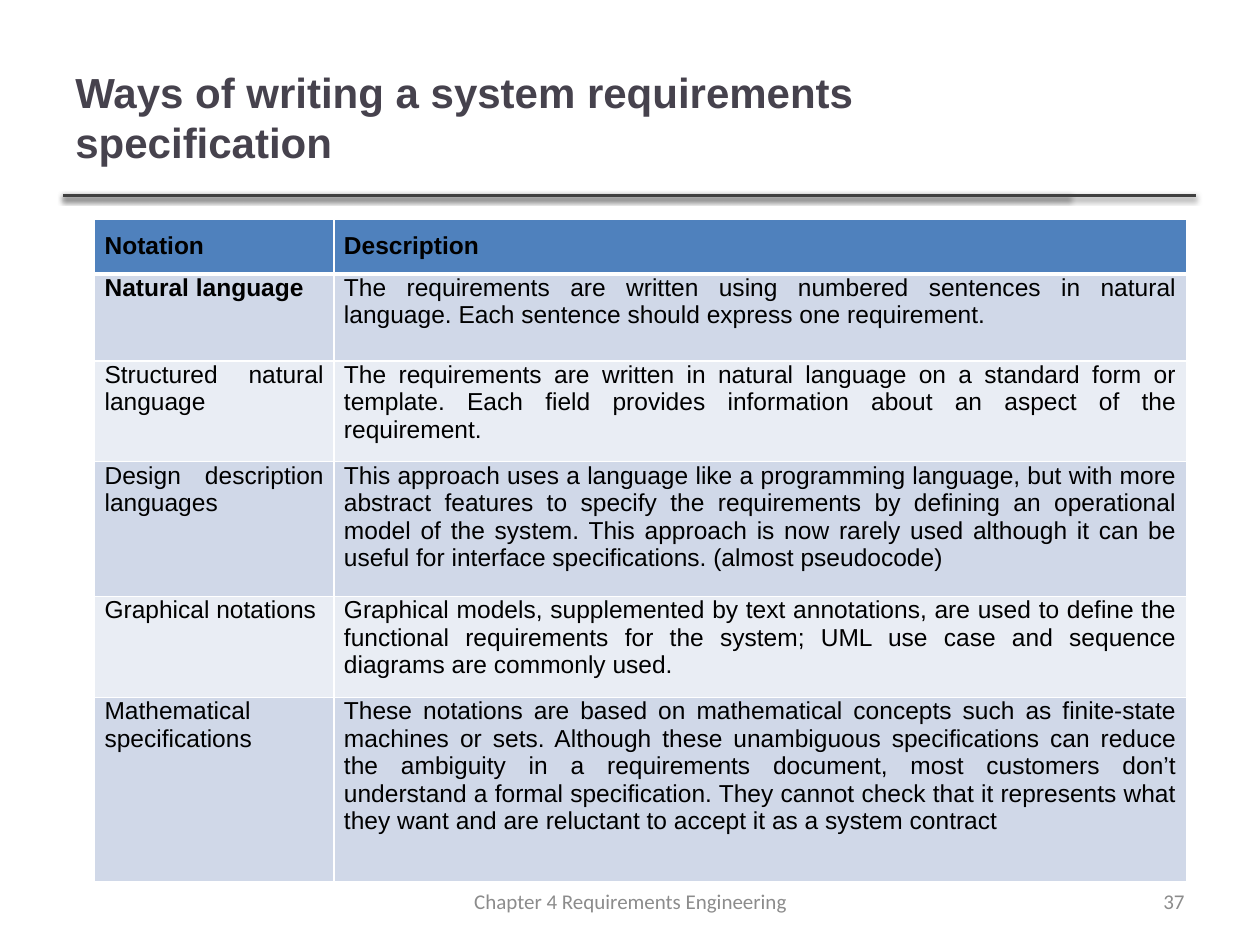
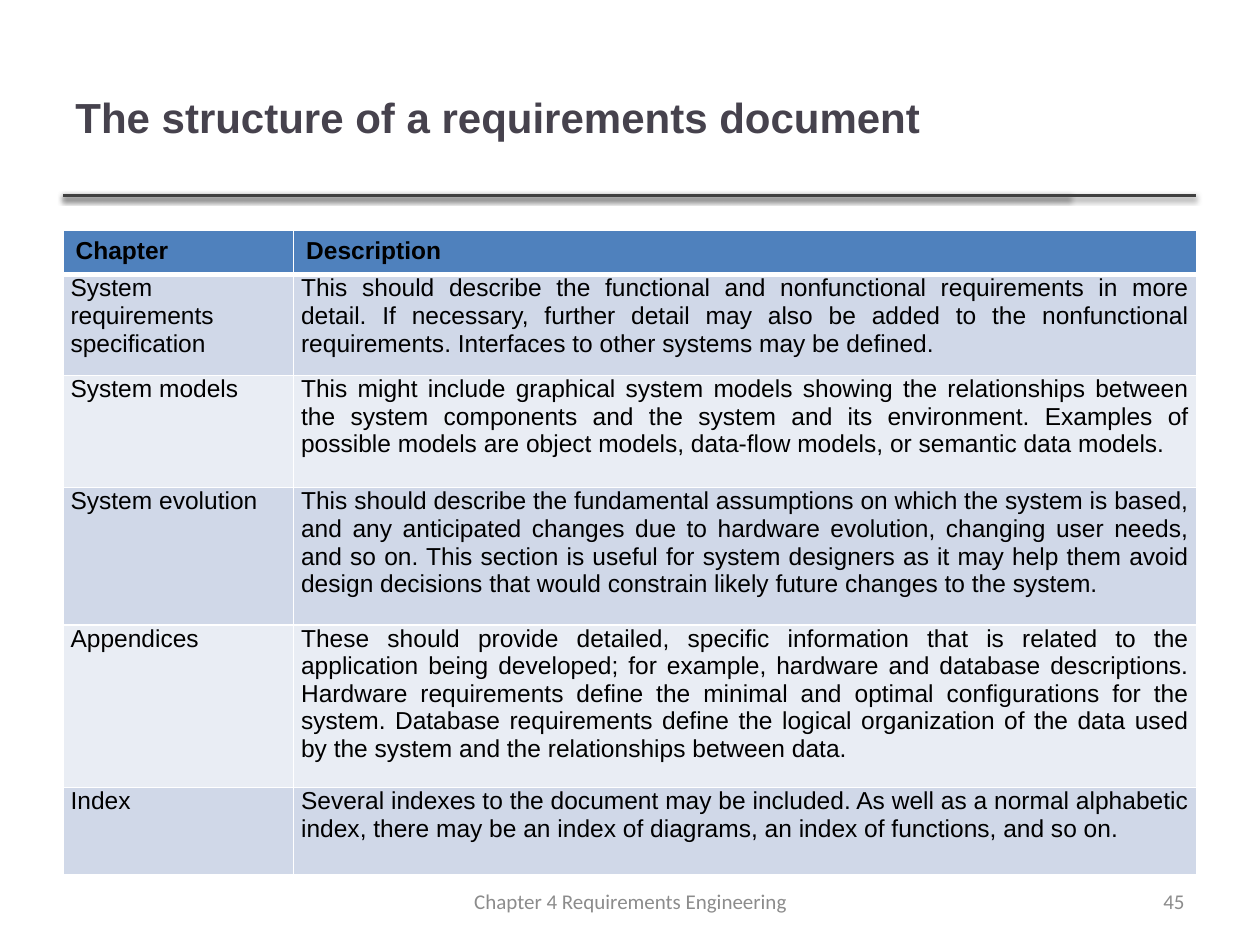
from dataclasses import dataclass

from lxml.etree import SubElement
from pptx import Presentation
from pptx.dml.color import RGBColor
from pptx.enum.shapes import MSO_CONNECTOR as Connector
from pptx.enum.text import MSO_ANCHOR as Anchor, PP_ALIGN as Align
from pptx.oxml.ns import qn
from pptx.slide import Slide
from pptx.table import _Cell as Cell
from pptx.text.text import _Paragraph as Paragraph
from pptx.util import Inches, Pt

WHITE = RGBColor(0xFF, 0xFF, 0xFF)
BLACK = RGBColor(0x00, 0x00, 0x00)
TITLE_COLOR = RGBColor(0x46, 0x42, 0x4D)
RULE_COLOR = RGBColor(0x40, 0x40, 0x40)
FOOTER_COLOR = RGBColor(0x8C, 0x8C, 0x8C)
HEADER_FILL = RGBColor(0x4F, 0x81, 0xBD)
BAND_FILLS = (RGBColor(0xD0, 0xD8, 0xE8), RGBColor(0xE9, 0xED, 0xF4))

FOOTER_TEXT = "Chapter 4 Requirements Engineering"
RULE_LEFT, RULE_TOP = 0.5, 1.55
RULE_ENDS = (8.49, 9.49)
THIN, THICK = 1, 3


@dataclass(frozen=True)
class TextStyle:
    font: str
    size: int
    color: RGBColor
    bold: bool = False


@dataclass(frozen=True)
class Box:
    left: float
    top: float
    width: float
    height: float


@dataclass(frozen=True)
class Insets:
    side: float
    top: float
    bottom: float


@dataclass(frozen=True)
class TablePage:
    title: str
    number: int
    left: float
    top: float
    columns: tuple[float, float]
    heights: tuple[float, ...]
    header_insets: Insets
    body_insets: Insets
    header_aligns: tuple[Align, Align]
    rows: tuple[tuple[str, str], ...]
    bold_entries: tuple[str, ...] = ()


TITLE_STYLE = TextStyle("Arial", 24, TITLE_COLOR, True)
HEADER_STYLE = TextStyle("Arial", 14, BLACK, True)
BODY_STYLE = TextStyle("Arial", 14, BLACK)
FOOTER_STYLE = TextStyle("Calibri", 12, FOOTER_COLOR)

TITLE_BOX = Box(0.5, 0.3, 7.98, 1.25)
FOOTER_BOX = Box(3.42, 6.95, 3.17, 0.4)
NUMBER_BOX = Box(7.17, 6.95, 2.33, 0.4)

PAGES = (
    TablePage(
        title="Ways of writing a system requirements specification",
        number=37,
        left=0.75,
        top=1.74,
        columns=(1.9, 6.77),
        heights=(0.4, 0.69, 0.69, 1.07, 0.69, 1.46),
        header_insets=Insets(0.08, 0.1, 0.1),
        body_insets=Insets(0.08, 0, 0.1),
        header_aligns=(Align.LEFT, Align.JUSTIFY),
        bold_entries=("Natural language",),
        rows=(
            ("Notation", "Description"),
            (
                "Natural language",
                "The requirements are written using numbered sentences in natural "
                "language. Each sentence should express one requirement.",
            ),
            (
                "Structured natural language",
                "The requirements are written in natural language on a standard form or "
                "template. Each field provides information about an aspect of the "
                "requirement.",
            ),
            (
                "Design description languages",
                "This approach uses a language like a programming language, but with more "
                "abstract features to specify the requirements by defining an operational "
                "model of the system. This approach is now rarely used although it can be "
                "useful for interface specifications. (almost pseudocode)",
            ),
            (
                "Graphical notations",
                "Graphical models, supplemented by text annotations, are used to define the "
                "functional requirements for the system; UML use case and sequence "
                "diagrams are commonly used.",
            ),
            (
                "Mathematical specifications",
                "These notations are based on mathematical concepts such as finite-state "
                "machines or sets. Although these unambiguous specifications can reduce "
                "the ambiguity in a requirements document, most customers don’t "
                "understand a formal specification. They cannot check that it represents "
                "what they want and are reluctant to accept it as a system contract",
            ),
        ),
    ),
    TablePage(
        title="The structure of a requirements document",
        number=45,
        left=0.5,
        top=1.83,
        columns=(1.83, 7.17),
        heights=(0.35, 0.76, 0.89, 1.09, 1.29, 0.69),
        header_insets=Insets(0.1, 0.05, 0.05),
        body_insets=Insets(0.06, 0, 0.1),
        header_aligns=(Align.LEFT, Align.LEFT),
        rows=(
            ("Chapter", "Description"),
            (
                "System requirements specification",
                "This should describe the functional and nonfunctional requirements in more "
                "detail. If necessary, further detail may also be added to the nonfunctional "
                "requirements. Interfaces to other systems may be defined.",
            ),
            (
                "System models",
                "This might include graphical system models showing the relationships between "
                "the system components and the system and its environment. Examples of "
                "possible models are object models, data-flow models, or semantic data models.",
            ),
            (
                "System evolution",
                "This should describe the fundamental assumptions on which the system is based, "
                "and any anticipated changes due to hardware evolution, changing user needs, "
                "and so on. This section is useful for system designers as it may help them "
                "avoid design decisions that would constrain likely future changes to the "
                "system.",
            ),
            (
                "Appendices",
                "These should provide detailed, specific information that is related to the "
                "application being developed; for example, hardware and database descriptions. "
                "Hardware requirements define the minimal and optimal configurations for the "
                "system. Database requirements define the logical organization of the data used "
                "by the system and the relationships between data.",
            ),
            (
                "Index",
                "Several indexes to the document may be included. As well as a normal alphabetic "
                "index, there may be an index of diagrams, an index of functions, and so on.",
            ),
        ),
    ),
)


def write(para: Paragraph, text: str, style: TextStyle, align: Align) -> None:
    para.alignment = align
    span = para.add_run()
    span.text = text
    span.font.name = style.font
    span.font.size = Pt(style.size)
    span.font.bold = style.bold
    span.font.color.rgb = style.color


def add_text(page: Slide, box: Box, text: str, style: TextStyle, align: Align) -> None:
    shape = page.shapes.add_textbox(
        Inches(box.left), Inches(box.top), Inches(box.width), Inches(box.height)
    )
    frame = shape.text_frame
    frame.word_wrap = True
    frame.vertical_anchor = Anchor.MIDDLE
    write(frame.paragraphs[0], text, style, align)


def add_rule(page: Slide, end: float) -> None:
    rule = page.shapes.add_connector(
        Connector.STRAIGHT, Inches(RULE_LEFT), Inches(RULE_TOP), Inches(end), Inches(RULE_TOP)
    )
    rule.line.color.rgb = RULE_COLOR
    rule.line.width = Pt(2)
    effects = SubElement(rule._element.spPr, qn("a:effectLst"))
    shadow = SubElement(
        effects,
        qn("a:outerShdw"),
        blurRad=str(Pt(3.1)),
        dist=str(Pt(1.6)),
        dir="5400000",
        rotWithShape="0",
    )
    color = SubElement(shadow, qn("a:srgbClr"), val=str(BLACK))
    SubElement(color, qn("a:alpha"), val="38000")


def set_borders(cell: Cell, row: int) -> None:
    widths = {
        "L": THIN,
        "R": THIN,
        "T": THICK if row == 1 else THIN,
        "B": THICK if row == 0 else THIN,
    }
    properties = cell._tc.get_or_add_tcPr()
    for side, width in widths.items():
        border = SubElement(properties, qn(f"a:ln{side}"), w=str(Pt(width)))
        fill = SubElement(border, qn("a:solidFill"))
        SubElement(fill, qn("a:srgbClr"), val=str(WHITE))


def fill_cell(cell: Cell, content: TablePage, row: int, column: int) -> None:
    text = content.rows[row][column]
    is_header = row == 0
    is_bold = is_header or text in content.bold_entries
    insets = content.header_insets if is_header else content.body_insets
    set_borders(cell, row)
    cell.fill.solid()
    cell.fill.fore_color.rgb = HEADER_FILL if is_header else BAND_FILLS[(row - 1) % 2]
    cell.margin_left = cell.margin_right = Inches(insets.side)
    cell.margin_top = Inches(insets.top)
    cell.margin_bottom = Inches(insets.bottom)
    align = content.header_aligns[column] if is_header else Align.JUSTIFY
    style = HEADER_STYLE if is_bold else BODY_STYLE
    write(cell.text_frame.paragraphs[0], text, style, align)


def add_content_table(page: Slide, content: TablePage) -> None:
    table = page.shapes.add_table(
        len(content.rows),
        len(content.columns),
        Inches(content.left),
        Inches(content.top),
        Inches(sum(content.columns)),
        Inches(sum(content.heights)),
    ).table
    for column, width in enumerate(content.columns):
        table.columns[column].width = Inches(width)
    for row, height in enumerate(content.heights):
        table.rows[row].height = Inches(height)
        for column in range(len(content.columns)):
            fill_cell(table.cell(row, column), content, row, column)


def add_page(deck: Presentation, content: TablePage) -> None:
    page = deck.slides.add_slide(deck.slide_layouts[6])
    for end in RULE_ENDS:
        add_rule(page, end)
    add_text(page, TITLE_BOX, content.title, TITLE_STYLE, Align.LEFT)
    add_content_table(page, content)
    add_text(page, FOOTER_BOX, FOOTER_TEXT, FOOTER_STYLE, Align.CENTER)
    add_text(page, NUMBER_BOX, str(content.number), FOOTER_STYLE, Align.RIGHT)


def main() -> None:
    deck = Presentation()
    deck.slide_width = Inches(10)
    deck.slide_height = Inches(7.5)
    for content in PAGES:
        add_page(deck, content)
    deck.save("out.pptx")


if __name__ == "__main__":
    main()
